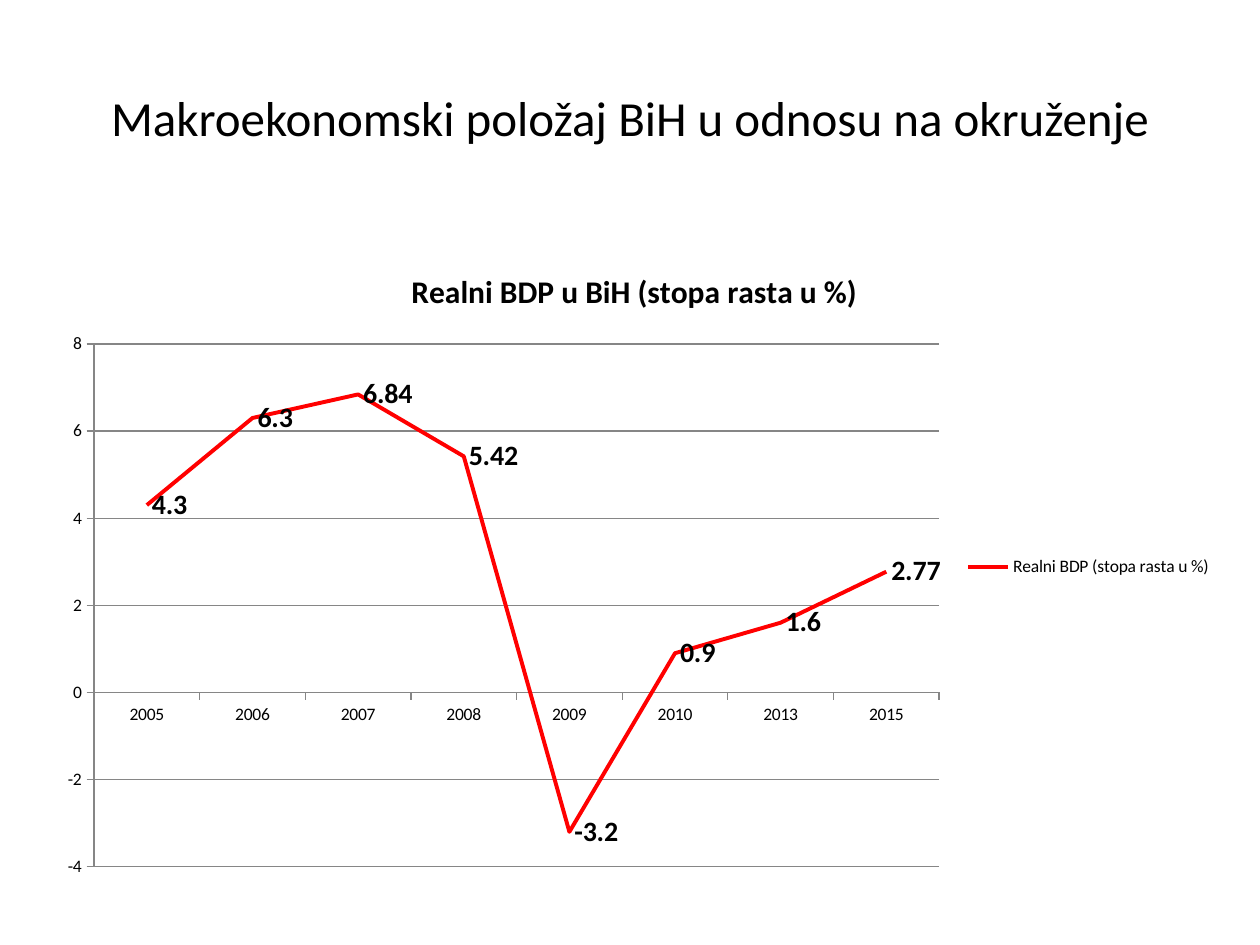
from dataclasses import dataclass

from pptx import Presentation
from pptx import util as u
from pptx.chart import data as chart_data
from pptx.dml import color
from pptx.enum import chart as ch, text


@dataclass(frozen=True)
class Theme:
    """Colours, font and type sizes of the slide."""
    font: str = "Calibri"
    ink: color.RGBColor = color.RGBColor(0, 0, 0)
    grid: color.RGBColor = color.RGBColor(0x86, 0x86, 0x86)
    growth: color.RGBColor = color.RGBColor(0xFF, 0, 0)
    title: int = 28
    chart_title: int = 18
    labels: int = 16
    body: int = 10


THEME = Theme()
GROWTH = {"2005": 4.3, "2006": 6.3, "2007": 6.84, "2008": 5.42,
          "2009": -3.2, "2010": 0.9, "2013": 1.6, "2015": 2.77}


def style_font(font, size, bold=False):
    """Apply the theme font and ink at a given size."""
    font.name, font.size, font.bold = THEME.font, u.Pt(size), bold
    font.color.rgb = THEME.ink


def style_line(line, rgb, width):
    """Give a line its colour and width in points."""
    line.color.rgb = rgb
    line.width = u.Pt(width)


def set_title(page, wording):
    """Place and fill the title placeholder."""
    box = page.shapes.title
    box.left, box.top = u.Inches(0.5), u.Inches(0.3)
    box.width, box.height = u.Inches(9), u.Inches(1.25)
    frame = box.text_frame
    frame.text = wording
    frame.vertical_anchor = text.MSO_ANCHOR.MIDDLE
    para = frame.paragraphs[0]
    para.alignment = text.PP_ALIGN.CENTER
    style_font(para.font, THEME.title)


def style_axes(chart):
    """Set ticks, axis lines, scale and gridlines."""
    for axis in (chart.category_axis, chart.value_axis):
        axis.major_tick_mark = ch.XL_TICK_MARK.OUTSIDE
        axis.minor_tick_mark = ch.XL_TICK_MARK.NONE
        style_line(axis.format.line, THEME.grid, 0.75)
    scale = chart.value_axis
    scale.minimum_scale, scale.maximum_scale, scale.major_unit = -4, 8, 2
    scale.has_major_gridlines = True
    style_line(scale.major_gridlines.format.line, THEME.grid, 0.75)


def style_series(series):
    """Draw the series as a straight line with value labels."""
    series.smooth = False
    series.marker.style = ch.XL_MARKER_STYLE.NONE
    style_line(series.format.line, THEME.growth, 2.25)
    labels = series.data_labels
    labels.show_value = True
    labels.position = ch.XL_LABEL_POSITION.RIGHT
    style_font(labels.font, THEME.labels, bold=True)


def add_growth_chart(page, heading, series_name):
    """Add the line chart of real GDP growth."""
    source = chart_data.CategoryChartData(number_format="General")
    source.categories = list(GROWTH)
    source.add_series(series_name, list(GROWTH.values()))
    chart = page.shapes.add_chart(
        ch.XL_CHART_TYPE.LINE, u.Inches(0.35), u.Inches(1.94),
        u.Inches(9.37), u.Inches(5.12), source).chart
    style_font(chart.font, THEME.body)
    chart.has_title = True
    chart.chart_title.include_in_layout = False
    frame = chart.chart_title.text_frame
    frame.text = heading
    style_font(frame.paragraphs[0].font, THEME.chart_title, bold=True)
    chart.has_legend = True
    chart.legend.position = ch.XL_LEGEND_POSITION.RIGHT
    chart.legend.include_in_layout = False
    chart.plots[0].vary_by_categories = False
    style_axes(chart)
    style_series(chart.plots[0].series[0])


def main():
    """Build the slide and save the deck."""
    deck = Presentation()
    deck.slide_width, deck.slide_height = u.Inches(10), u.Inches(7.5)
    page = deck.slides.add_slide(deck.slide_layouts.get_by_name("Title Only"))
    set_title(page, "Makroekonomski položaj BiH u odnosu na okruženje")
    add_growth_chart(page, "Realni BDP u BiH (stopa rasta u %)",
                     "Realni BDP (stopa rasta u %)")
    deck.save("out.pptx")


if __name__ == "__main__":
    main()
